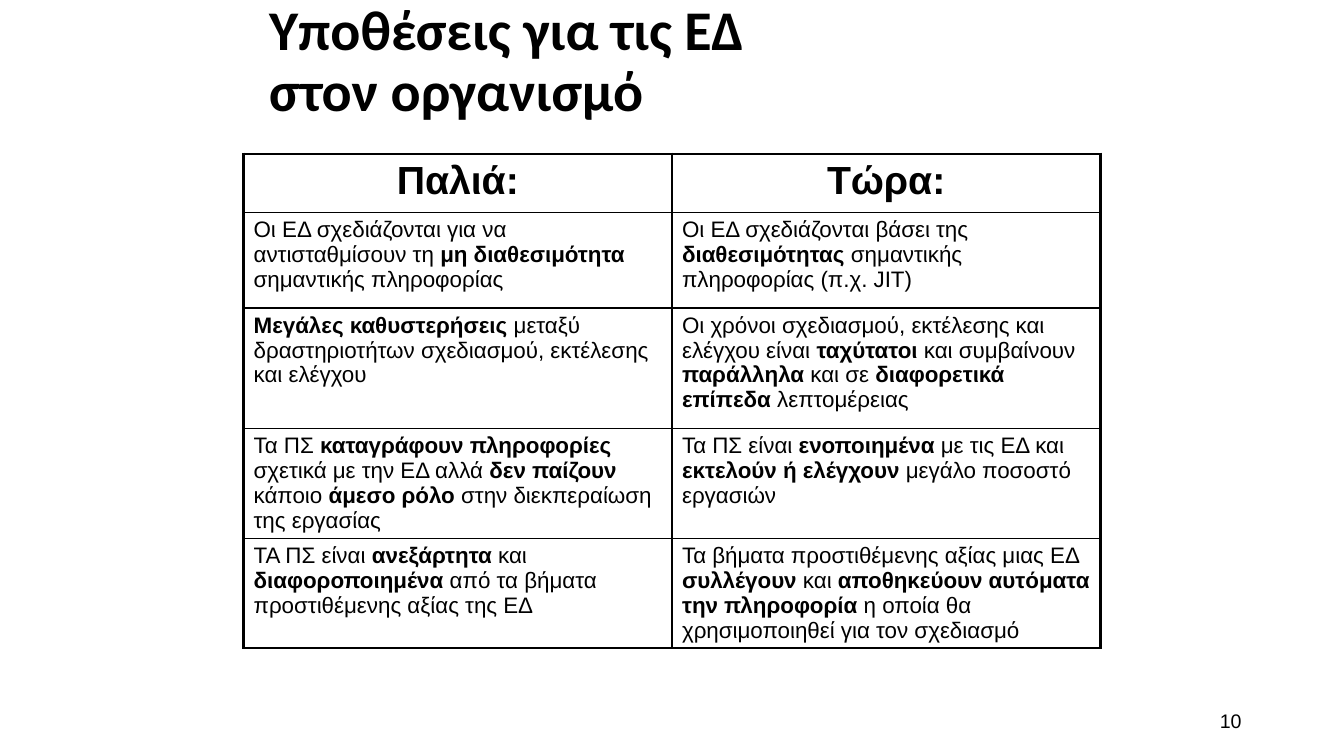
import dataclasses

import pptx
import pptx.dml.color
import pptx.enum.text
import pptx.oxml.ns
import pptx.util
from lxml import etree

Pt = pptx.util.Pt
Align = pptx.enum.text.PP_ALIGN
Anchor = pptx.enum.text.MSO_ANCHOR


@dataclasses.dataclass(frozen=True)
class Theme:
    """Colours, fonts, type sizes and line widths of the slide."""
    ink: str = "000000"
    title_font: str = "Calibri"
    body_font: str = "Arial"
    title: int = 40
    header: int = 28
    body: int = 16
    number: int = 14
    outer: float = 2.25
    inner: float = 1


THEME = Theme()
COLUMNS = ["Παλιά:", "Τώρα:"]
ROWS = [
    ["Οι ΕΔ σχεδιάζονται για να αντισταθμίσουν τη **μη διαθεσιμότητα** "
     "σημαντικής πληροφορίας",
     "Οι ΕΔ σχεδιάζονται βάσει της **διαθεσιμότητας** σημαντικής "
     "πληροφορίας (π.χ. JIT)"],
    ["**Μεγάλες καθυστερήσεις** μεταξύ δραστηριοτήτων σχεδιασμού, "
     "εκτέλεσης και ελέγχου",
     "Οι χρόνοι σχεδιασμού, εκτέλεσης και ελέγχου είναι **ταχύτατοι** και "
     "συμβαίνουν **παράλληλα** και σε **διαφορετικά επίπεδα** λεπτομέρειας"],
    ["Τα ΠΣ **καταγράφουν πληροφορίες** σχετικά με την ΕΔ αλλά "
     "**δεν παίζουν** κάποιο **άμεσο ρόλο** στην διεκπεραίωση της εργασίας",
     "Τα ΠΣ είναι **ενοποιημένα** με τις ΕΔ και **εκτελούν ή ελέγχουν** "
     "μεγάλο ποσοστό εργασιών"],
    ["ΤΑ ΠΣ είναι **ανεξάρτητα** και **διαφοροποιημένα** από τα βήματα "
     "προστιθέμενης αξίας της ΕΔ",
     "Τα βήματα προστιθέμενης αξίας μιας ΕΔ **συλλέγουν** και "
     "**αποθηκεύουν αυτόματα την πληροφορία** η οποία θα χρησιμοποιηθεί "
     "για τον σχεδιασμό"],
]
ROW_HEIGHTS = [42, 68, 86, 78.5, 78.5]


def style(p, name, size, align=Align.LEFT):
    """Set the font and alignment of a paragraph."""
    p.alignment = align
    p.font.name = name
    p.font.size = Pt(size)
    p.font.color.rgb = pptx.dml.color.RGBColor.from_string(THEME.ink)


def add_marked_text(p, text):
    """Add runs to a paragraph, bold between double asterisks."""
    for i, part in enumerate(text.split("**")):
        if part:
            r = p.add_run()
            r.text = part
            r.font.bold = i % 2 == 1


def add_borders(cell, widths):
    """Draw the cell's sides, given widths by tag, in schema order."""
    tc_pr = cell._tc.get_or_add_tcPr()
    qn = pptx.oxml.ns.qn
    for i, (tag, width) in enumerate(widths.items()):
        ln = etree.Element(qn(f"a:{tag}"), w=str(int(Pt(width))))
        fill = etree.SubElement(ln, qn("a:solidFill"))
        etree.SubElement(fill, qn("a:srgbClr"), val=THEME.ink)
        tc_pr.insert(i, ln)


def add_title(slide, x, y, w, h):
    """Place the two-line title."""
    sp = slide.shapes.title
    sp.left, sp.top, sp.width, sp.height = Pt(x), Pt(y), Pt(w), Pt(h)
    tf = sp.text_frame
    tf.vertical_anchor = Anchor.MIDDLE
    p = tf.paragraphs[0]
    p.text = "Υποθέσεις για τις ΕΔ \vστον οργανισμό"
    p.line_spacing = 0.9
    style(p, THEME.title_font, THEME.title)
    p.font.bold = True


def add_comparison(slide, x, y, w):
    """Place the table that compares then and now."""
    rows = [[f"**{name}**" for name in COLUMNS]] + ROWS
    last_row, last_col = len(rows) - 1, len(COLUMNS) - 1
    frame = slide.shapes.add_table(len(rows), len(COLUMNS), Pt(x), Pt(y),
                                   Pt(w), Pt(sum(ROW_HEIGHTS)))
    table = frame.table
    for i, texts in enumerate(rows):
        table.rows[i].height = Pt(ROW_HEIGHTS[i])
        for j, text in enumerate(texts):
            cell = table.cell(i, j)
            cell.fill.background()
            edges = {"lnL": j == 0, "lnR": j == last_col,
                     "lnT": i == 0, "lnB": i == last_row}
            add_borders(cell, {tag: THEME.outer if edge else THEME.inner
                               for tag, edge in edges.items()})
            p = cell.text_frame.paragraphs[0]
            add_marked_text(p, text)
            if i == 0:
                style(p, THEME.body_font, THEME.header, Align.CENTER)
            else:
                style(p, THEME.body_font, THEME.body)


def add_number(slide, x, y, w, h):
    """Place the slide number."""
    tf = slide.shapes.add_textbox(Pt(x), Pt(y), Pt(w), Pt(h)).text_frame
    tf.word_wrap = True
    tf.vertical_anchor = Anchor.MIDDLE
    p = tf.paragraphs[0]
    p.text = "10"
    style(p, THEME.body_font, THEME.number, Align.RIGHT)


def main():
    """Build and save the slide."""
    prs = pptx.Presentation()
    prs.slide_width, prs.slide_height = Pt(960), Pt(540)
    slide = prs.slides.add_slide(prs.slide_layouts.get_by_name("Title Only"))
    add_title(slide, 185, 0, 612, 90)
    add_comparison(slide, 174, 110, 612)
    add_number(slide, 678, 500.5, 216, 29)
    prs.save("out.pptx")


if __name__ == "__main__":
    main()
